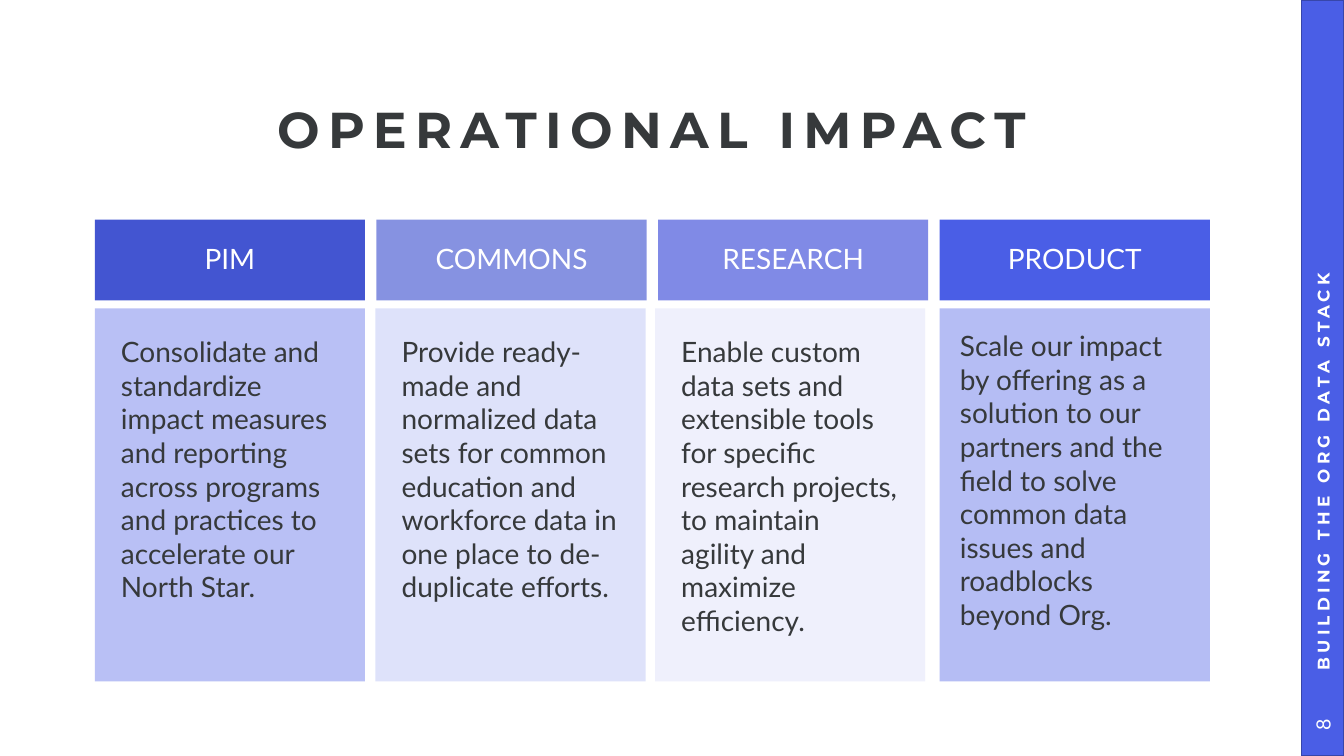
from dataclasses import dataclass

from lxml.etree import SubElement
from pptx import Presentation
from pptx.dml.color import RGBColor
from pptx.enum.shapes import MSO_SHAPE
from pptx.enum.text import MSO_ANCHOR, MSO_AUTO_SIZE, PP_ALIGN
from pptx.oxml.ns import qn
from pptx.shapes.autoshape import Shape
from pptx.slide import Slide
from pptx.util import Inches, Pt

COLORS = {
    "white": "FFFFFF",
    "ink": "36393B",
    "bright_blue": "4A5EE6",
    "bar_outline": "3746AA",
    "royal": "4355D1",
    "navy": "1C32C8",
    "violet": "808AE6",
    "periwinkle": "929EF0",
    "lavender": "B7BFF5",
    "mist": "DBDFFA",
}


@dataclass(frozen=True)
class Box:
    left: float
    top: float
    width: float
    height: float


@dataclass(frozen=True)
class Fill:
    color: str
    opacity: int = 100


@dataclass(frozen=True)
class TextStyle:
    size: int
    color: str
    font: str = "Lato"
    bold: bool = False
    tracking: int = 0
    alignment: PP_ALIGN = PP_ALIGN.LEFT
    anchor: MSO_ANCHOR = MSO_ANCHOR.MIDDLE
    line_spacing: float = 1.0
    margins: tuple[float, float, float, float] = (0.1, 0.05, 0.1, 0.05)


@dataclass(frozen=True)
class Card:
    heading: str
    body: str
    heading_fill: Fill
    body_fill: Fill
    body_shift: float = 0.0
    body_margin: float = 0.26


CARDS = [
    Card(
        "PIM",
        "Consolidate and standardize impact measures and reporting across "
        "programs and practices to accelerate our North Star.",
        Fill("royal"),
        Fill("periwinkle", 64),
    ),
    Card(
        "COMMONS",
        "Provide ready-made and normalized data sets for common education and "
        "workforce data in one place to de-duplicate efforts.",
        Fill("navy", 53),
        Fill("lavender", 45),
        body_shift=-0.01,
    ),
    Card(
        "RESEARCH",
        "Enable custom data sets and extensible tools for specific research "
        "projects, to maintain agility and maximize efficiency.",
        Fill("violet"),
        Fill("mist", 44),
        body_shift=-0.03,
    ),
    Card(
        "PRODUCT",
        "Scale our impact by offering as a solution to our partners and the "
        "field to solve common data issues and roadblocks beyond Org.",
        Fill("bright_blue"),
        Fill("periwinkle", 68),
        body_margin=0.2,
    ),
]

FIRST_LEFT, LAST_LEFT = 0.94, 9.32
CARD_WIDTH = 2.68
HEADING_STYLE = TextStyle(
    20, "white", alignment=PP_ALIGN.CENTER, line_spacing=0.9, margins=(0.21,) * 4
)
TITLE_STYLE = TextStyle(
    36, "ink", "Montserrat", True, 6, PP_ALIGN.CENTER, line_spacing=0.9, margins=(0,) * 4
)
DECK_STYLE = TextStyle(
    12, "white", "Montserrat", True, 3, margins=(0.23, 0.05, 0.1, 0.05)
)
NUMBER_STYLE = TextStyle(14, "white", alignment=PP_ALIGN.CENTER)


def rgb(name: str) -> RGBColor:
    return RGBColor.from_string(COLORS[name])


def lengths(box: Box) -> tuple[Inches, Inches, Inches, Inches]:
    return Inches(box.left), Inches(box.top), Inches(box.width), Inches(box.height)


def write_text(shape: Shape, text: str, style: TextStyle) -> None:
    frame = shape.text_frame
    frame.text = text
    frame.word_wrap = True
    frame.auto_size = MSO_AUTO_SIZE.NONE
    frame.vertical_anchor = style.anchor
    frame.margin_left, frame.margin_top, frame.margin_right, frame.margin_bottom = map(
        Inches, style.margins
    )
    paragraph = frame.paragraphs[0]
    paragraph.alignment = style.alignment
    paragraph.line_spacing = style.line_spacing
    run = paragraph.runs[0]
    run.font.name = style.font
    run.font.size = Pt(style.size)
    run.font.bold = style.bold
    run.font.color.rgb = rgb(style.color)
    if style.tracking:
        run.font._element.set("spc", str(style.tracking * 100))


def add_rectangle(slide: Slide, box: Box, fill: Fill) -> Shape:
    shape = slide.shapes.add_shape(MSO_SHAPE.RECTANGLE, *lengths(box))
    shape.shadow.inherit = False
    shape.line.fill.background()
    shape.fill.solid()
    shape.fill.fore_color.rgb = rgb(fill.color)
    if fill.opacity < 100:
        color = shape._element.spPr.find(qn("a:solidFill")).find(qn("a:srgbClr"))
        SubElement(color, qn("a:alpha"), val=str(fill.opacity * 1000))
    return shape


def add_card(slide: Slide, card: Card, left: float) -> None:
    heading = add_rectangle(slide, Box(left, 2.18, CARD_WIDTH, 0.8), card.heading_fill)
    write_text(heading, card.heading, HEADING_STYLE)
    body_box = Box(left + card.body_shift, 3.06, CARD_WIDTH, 3.7)
    body = add_rectangle(slide, body_box, card.body_fill)
    body_style = TextStyle(
        20, "ink", anchor=MSO_ANCHOR.TOP, margins=(card.body_margin,) * 4
    )
    write_text(body, card.body, body_style)


def add_side_text(slide: Slide, text: str, box: Box, style: TextStyle) -> None:
    shape = slide.shapes.add_textbox(*lengths(box))
    shape.rotation = 270
    write_text(shape, text, style)


def main() -> None:
    presentation = Presentation()
    presentation.slide_width = Inches(13.33)
    presentation.slide_height = Inches(7.5)
    slide = presentation.slides.add_slide(presentation.slide_layouts[5])

    title = slide.shapes.title
    title.left, title.top, title.width, title.height = lengths(
        Box(0.93, 0.96, 11.07, 0.71)
    )
    write_text(title, "OPERATIONAL IMPACT", TITLE_STYLE)

    side_bar = add_rectangle(slide, Box(12.91, 0, 0.42, 7.5), Fill("bright_blue"))
    side_bar.line.color.rgb = rgb("bar_outline")
    side_bar.line.width = Pt(1)

    step = (LAST_LEFT - FIRST_LEFT) / (len(CARDS) - 1)
    for index, card in enumerate(CARDS):
        add_card(slide, card, FIRST_LEFT + index * step)

    add_side_text(
        slide, "BUILDING THE ORG DATA STACK", Box(9.68, 3.23, 6.88, 0.42), DECK_STYLE
    )
    add_side_text(slide, "8", Box(12.81, 6.98, 0.62, 0.42), NUMBER_STYLE)
    presentation.save("out.pptx")


if __name__ == "__main__":
    main()
